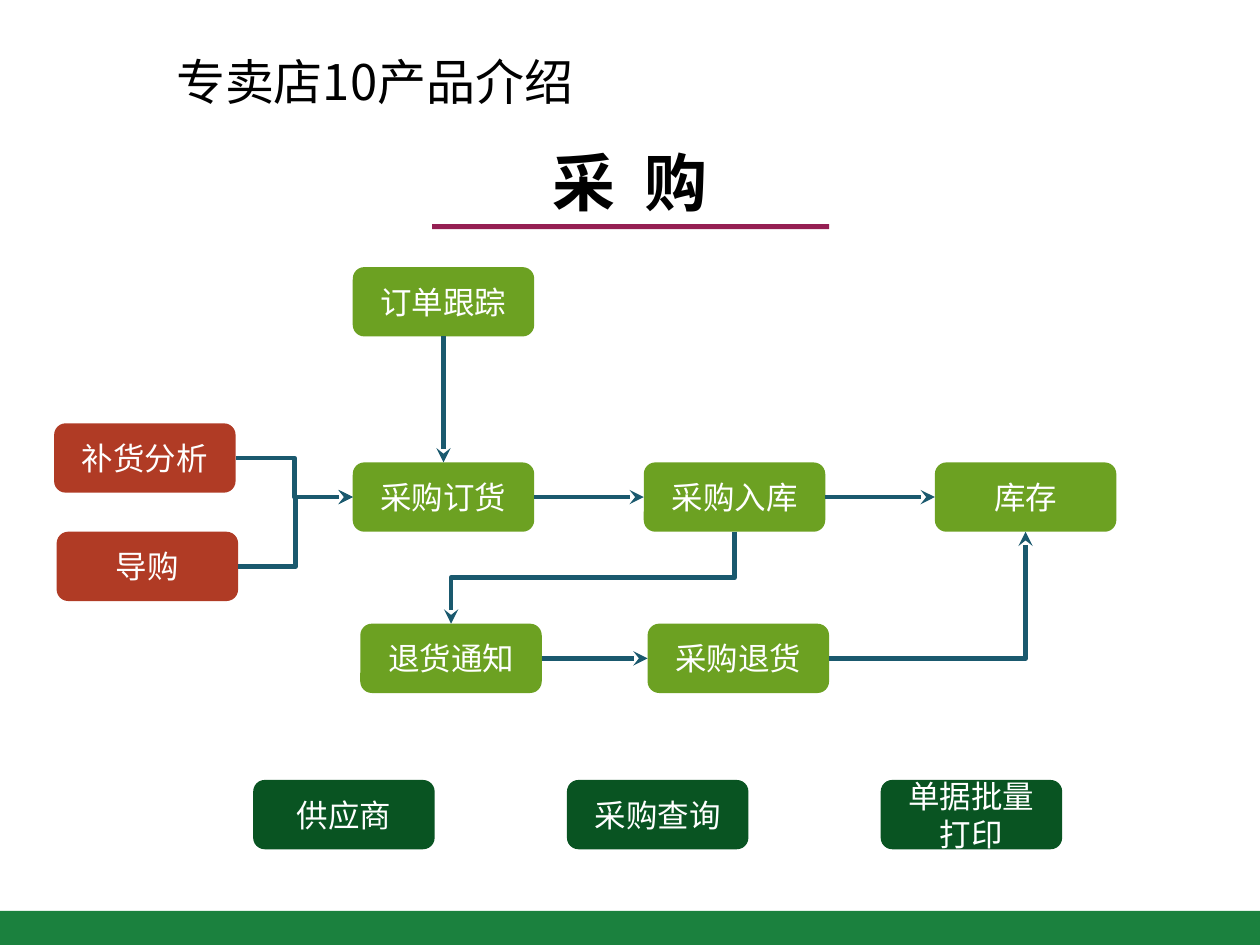
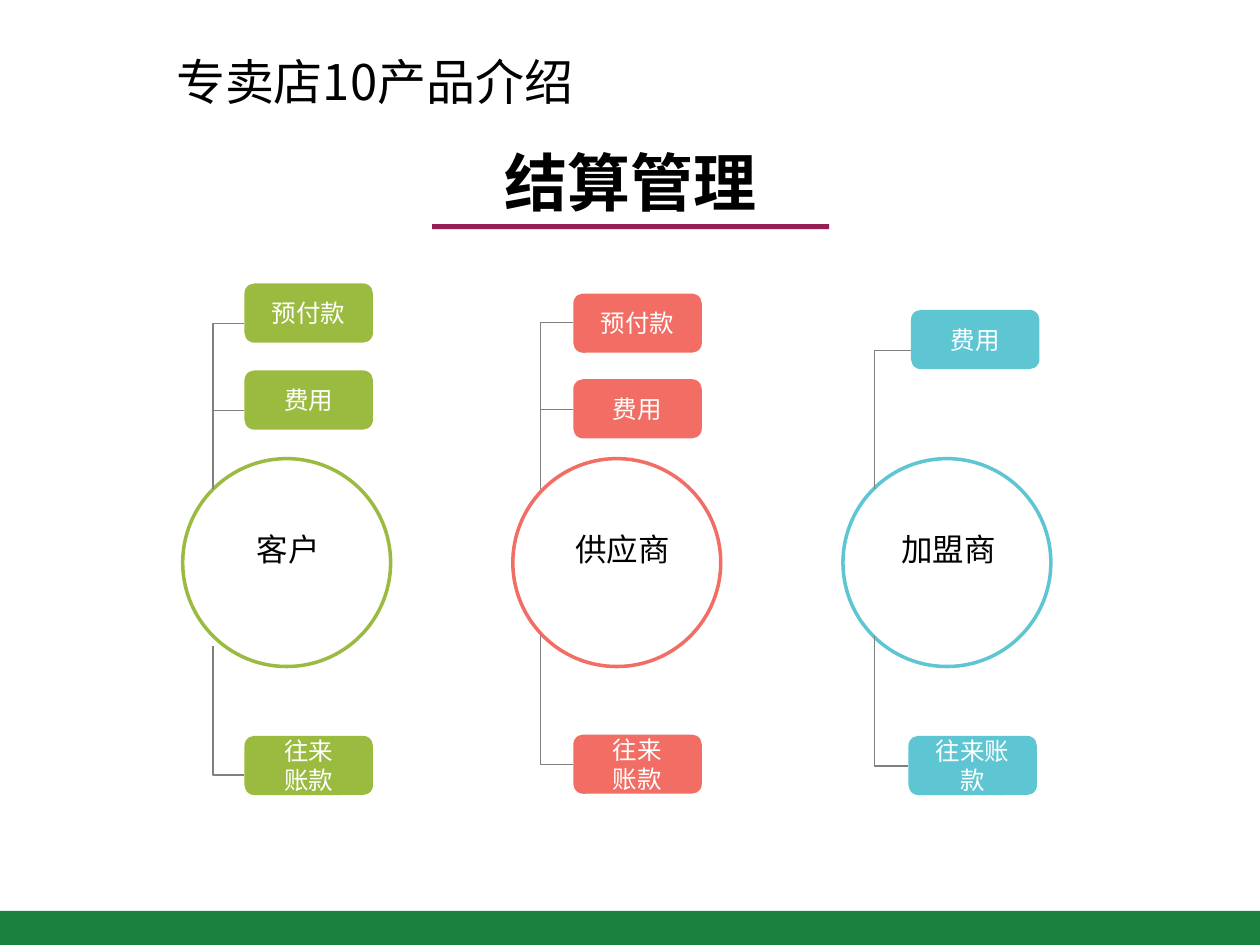
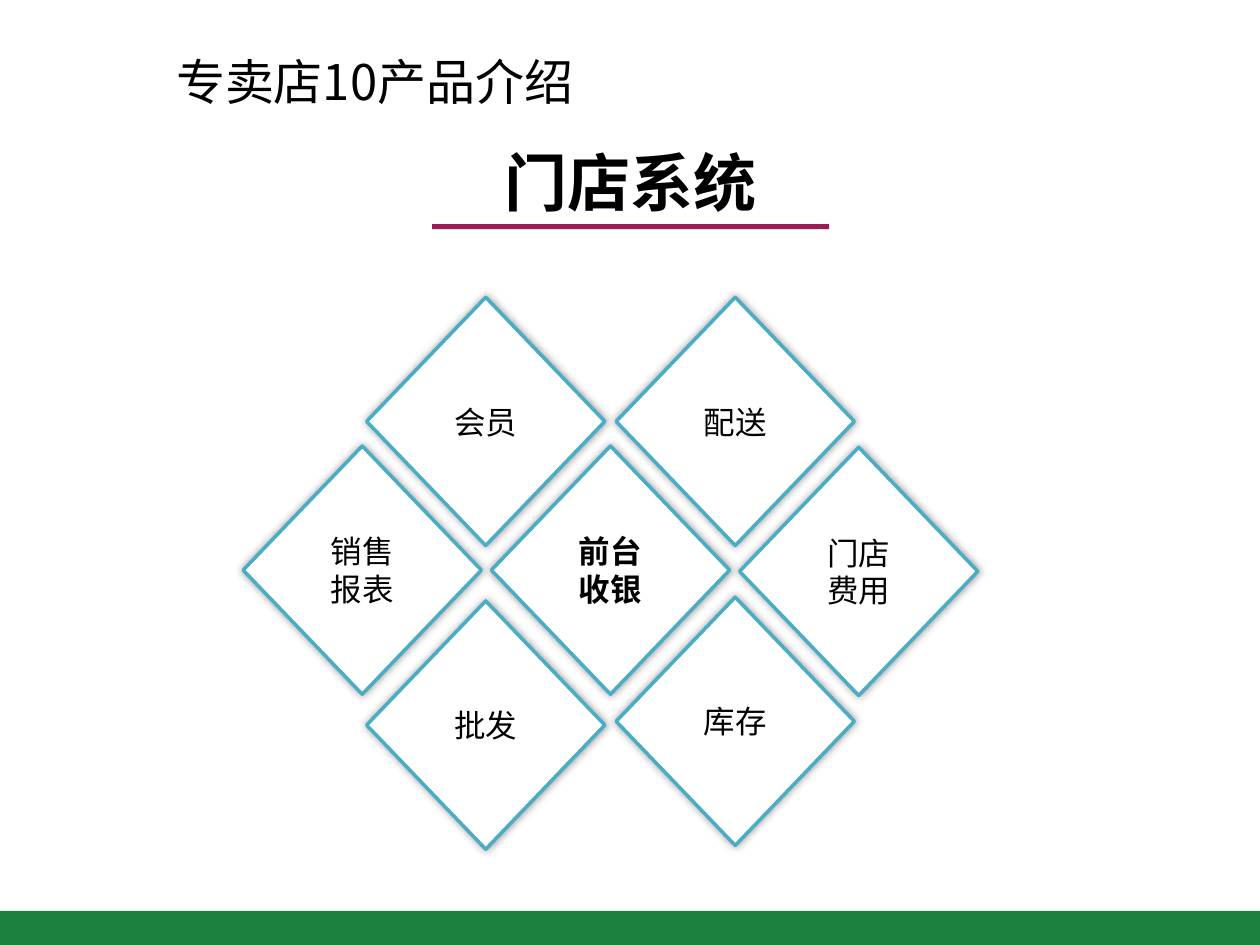
from dataclasses import dataclass
from typing import NamedTuple

import lxml.etree
import pptx
import pptx.dml.color
import pptx.enum.shapes
import pptx.enum.text
import pptx.oxml.ns
import pptx.util

Inches = pptx.util.Inches
Pt = pptx.util.Pt
qn = pptx.oxml.ns.qn
Shape = pptx.enum.shapes.MSO_SHAPE
Line = pptx.enum.shapes.MSO_CONNECTOR
Anchor = pptx.enum.text.MSO_ANCHOR
Align = pptx.enum.text.PP_ALIGN

NOTO = "Noto Sans CJK SC"
CALIBRI = "Calibri"
BLACK, WHITE = "000000", "FFFFFF"
BAND, RULE = "1B813E", "951F53"
GREEN, RED, DARK, TEAL = "6CA122", "B03B25", "095422", "1A596E"
LIME, CORAL, AQUA, GREY = "9BBB40", "F26D64", "5EC6D3", "808080"
BLUE = "4BACC6"


class Point(NamedTuple):
    x: float
    y: float


@dataclass
class Box:
    x: float
    y: float
    w: float
    h: float

    def side(self, name: str) -> Point:
        """Middle of the left, right, top or bottom side."""
        across = {"left": 0, "right": 1}.get(name, 0.5)
        down = {"top": 0, "bottom": 1}.get(name, 0.5)
        return Point(self.x + self.w * across, self.y + self.h * down)

    def frame(self) -> list:
        return [Inches(v) for v in (self.x, self.y, self.w, self.h)]


@dataclass
class Type:
    size: float
    hue: str = BLACK
    face: str = NOTO
    bold: bool = False
    align: Align = Align.CENTER


class Node(NamedTuple):
    text: str
    x: float
    y: float
    hue: str = GREEN

    def box(self) -> Box:
        return Box(self.x, self.y, 1.44, 0.55)


class Link(NamedTuple):
    start: str
    exit: str
    end: str
    entry: str
    bends: int = 0
    upright: bool = False


class Tag(NamedTuple):
    text: str
    x: float
    y: float
    drop: float  # from the top of the tag to its wire


@dataclass
class Party:
    name: str
    hue: str
    label: float
    stem: float
    base: float
    upper: list[Tag]
    lower: Tag


class Tile(NamedTuple):
    text: str
    x: float
    y: float
    style: Type


def rgb(hue: str) -> pptx.dml.color.RGBColor:
    return pptx.dml.color.RGBColor.from_string(hue)


def write(frame, text: str, style: Type, anchor=Anchor.MIDDLE) -> None:
    frame.text = text
    frame.word_wrap = True
    frame.vertical_anchor = anchor
    for para in frame.paragraphs:
        para.alignment = style.align
        for run in para.runs:
            font = run.font
            font.size = Pt(style.size)
            font.bold = style.bold
            font.color.rgb = rgb(style.hue)
            font.name = style.face
            props = run._r.get_or_add_rPr()
            lxml.etree.SubElement(props, qn("a:ea")).set("typeface", NOTO)


def form(slide, kind: Shape, box: Box, fill: str = "", edge: str = ""):
    """Add a preset shape with an optional fill and a two-point edge."""
    shape = slide.shapes.add_shape(kind, *box.frame())
    shape.shadow.inherit = False
    if fill:
        shape.fill.solid()
        shape.fill.fore_color.rgb = rgb(fill)
    else:
        shape.fill.background()
    if edge:
        shape.line.color.rgb = rgb(edge)
        shape.line.width = Pt(2)
    else:
        shape.line.fill.background()
    return shape


def label(slide, box: Box, text: str, style: Type) -> None:
    area = slide.shapes.add_textbox(*box.frame())
    write(area.text_frame, text, style, Anchor.TOP)


def glow(shape) -> None:
    """Give the shape a soft shadow on all sides."""
    effects = shape._element.spPr.find(qn("a:effectLst"))
    shade = lxml.etree.SubElement(effects, qn("a:outerShdw"))
    shade.set("blurRad", str(Pt(5)))
    shade.set("dist", "0")
    hue = lxml.etree.SubElement(shade, qn("a:srgbClr"))
    hue.set("val", BLACK)
    lxml.etree.SubElement(hue, qn("a:alpha")).set("val", "40000")


def wire(slide, start: Point, end: Point, hue: str, width: float,
         bends: int = 0, upright: bool = False, arrow: bool = False) -> None:
    """Join two points; an upright wire leaves its start vertically."""
    a, b, turn = start, end, 0
    if upright:
        dx, dy = end.x - start.x, end.y - start.y
        mid = Point(start.x + dx / 2, start.y + dy / 2)
        turn = 90 if dy > 0 else 270
        half = Point(abs(dy) / 2, -dx / 2 if dy > 0 else dx / 2)
        a = Point(mid.x - half.x, mid.y - half.y)
        b = Point(mid.x + half.x, mid.y + half.y)
    kind = Line.ELBOW if bends else Line.STRAIGHT
    link = slide.shapes.add_connector(kind, *map(Inches, (*a, *b)))
    link.line.color.rgb = rgb(hue)
    link.line.width = Pt(width)
    props = link._element.spPr
    if bends:
        props.find(qn("a:prstGeom")).set("prst", f"bentConnector{bends + 1}")
    if turn:
        props.find(qn("a:xfrm")).set("rot", str(turn * 60000))
    if arrow:
        tip = lxml.etree.SubElement(props.find(qn("a:ln")), qn("a:tailEnd"))
        tip.set("type", "stealth")
    lxml.etree.SubElement(props, qn("a:effectLst"))


def page(deck, title: str, gap: float = 0):
    """Add a slide with the shared band, header, title and rule."""
    slide = deck.slides.add_slide(deck.slide_layouts[5])
    head = slide.shapes.title
    head.left, head.top, head.width, head.height = Box(0.75, 0.92, 8.5, 1.04).frame()
    write(head.text_frame, title, Type(36, bold=True))
    head.text_frame.auto_size = pptx.enum.text.MSO_AUTO_SIZE.NONE
    if gap:
        run = head.text_frame.paragraphs[0].runs[0]
        run._r.get_or_add_rPr().set("spc", str(int(gap * 100)))
    form(slide, Shape.RECTANGLE, Box(0, 7.23, 10, 0.27), BAND)
    label(slide, Box(1.3, 0.36, 5.2, 0.57), "专卖店10产品介绍",
          Type(28, align=Align.LEFT))
    form(slide, Shape.RECTANGLE, Box(3.43, 1.78, 3.15, 0.04), RULE)
    return slide


def buying(deck) -> None:
    slide = page(deck, "采 购", gap=4)
    cols = [2.8 + 2.31 * i for i in range(3)]
    row, back = 3.67, 4.95
    nodes = [
        Node("订单跟踪", cols[0], 2.12),
        Node("补货分析", 0.43, 3.36, RED),
        Node("导购", 0.45, 4.22, RED),
        *(Node(text, x, row) for text, x in zip(("采购订货", "采购入库", "库存"), cols)),
        Node("退货通知", 2.86, back),
        Node("采购退货", 5.14, back),
    ]
    tools = ("供应商", "采购查询", "单据批量打印")
    nodes += [Node(text, 2.01 + 2.49 * i, 6.19, DARK) for i, text in enumerate(tools)]
    links = [
        Link("补货分析", "right", "采购订货", "left", 2),
        Link("导购", "right", "采购订货", "left", 2),
        Link("采购订货", "right", "采购入库", "left"),
        Link("采购入库", "right", "库存", "left"),
        Link("采购退货", "right", "库存", "bottom", 1),
        Link("订单跟踪", "bottom", "采购订货", "top"),
        Link("退货通知", "right", "采购退货", "left"),
        Link("采购入库", "bottom", "退货通知", "top", 2, True),
    ]
    for node in nodes:
        shape = form(slide, Shape.ROUNDED_RECTANGLE, node.box(), node.hue)
        write(shape.text_frame, node.text, Type(18, WHITE))
    spots = {node.text: node.box() for node in nodes}
    for link in links:
        wire(slide, spots[link.start].side(link.exit),
             spots[link.end].side(link.entry), TEAL, 2.75,
             link.bends, link.upright, arrow=True)


def billing(deck) -> None:
    slide = page(deck, "结算管理")
    parties = [
        Party("客户", LIME, 1.71, 1.69, 5.13,
              [Tag("预付款", 1.94, 2.25, 0.32), Tag("费用", 1.94, 2.94, 0.32)],
              Tag("往来\n账款", 1.94, 5.84, 0.31)),
        Party("供应商", CORAL, 4.36, 4.29, 5.04,
              [Tag("预付款", 4.55, 2.33, 0.23), Tag("费用", 4.55, 3.01, 0.24)],
              Tag("往来\n账款", 4.55, 5.83, 0.24)),
        Party("加盟商", AQUA, 6.95, 6.94, 5.05,
              [Tag("费用", 7.23, 2.46, 0.32)],
              Tag("往来账款", 7.21, 5.84, 0.24)),
    ]
    for i, party in enumerate(parties):
        form(slide, Shape.OVAL, Box(1.45 + 2.62 * i, 3.64, 1.65, 1.65), edge=party.hue)
        label(slide, Box(party.label, 4.16, 1.16, 0.4), party.name,
              Type(18, face=CALIBRI))
        for tag in (*party.upper, party.lower):
            root = party.base if tag is party.lower else 3.88
            wire(slide, Point(party.stem, root), Point(tag.x, tag.y + tag.drop),
                 GREY, 0.75, bends=1, upright=True)
            shape = form(slide, Shape.ROUNDED_RECTANGLE,
                         Box(tag.x, tag.y, 1.02, 0.47), party.hue)
            write(shape.text_frame, tag.text, Type(14, WHITE, CALIBRI))


def store(deck) -> None:
    slide = page(deck, "门店系统")
    plain = Type(18, face=CALIBRI)
    tiles = [
        Tile("销售报表", 1.93, 3.54, plain),
        Tile("门店费用", 5.87, 3.55, plain),
        Tile("配送", 4.89, 2.36, plain),
        Tile("批发", 2.91, 4.77, plain),
        Tile("库存", 4.89, 4.74, plain),
        Tile("会员", 2.91, 2.36, plain),
        Tile("前台收银", 3.9, 3.54, Type(18, bold=True)),
    ]
    for tile in tiles:
        shape = form(slide, Shape.DIAMOND, Box(tile.x, tile.y, 1.89, 1.97), WHITE, BLUE)
        glow(shape)
        write(shape.text_frame, tile.text, tile.style)


def main() -> None:
    deck = pptx.Presentation()
    deck.slide_width, deck.slide_height = Inches(10), Inches(7.5)
    for build in (buying, billing, store):
        build(deck)
    deck.save("out.pptx")


if __name__ == "__main__":
    main()
